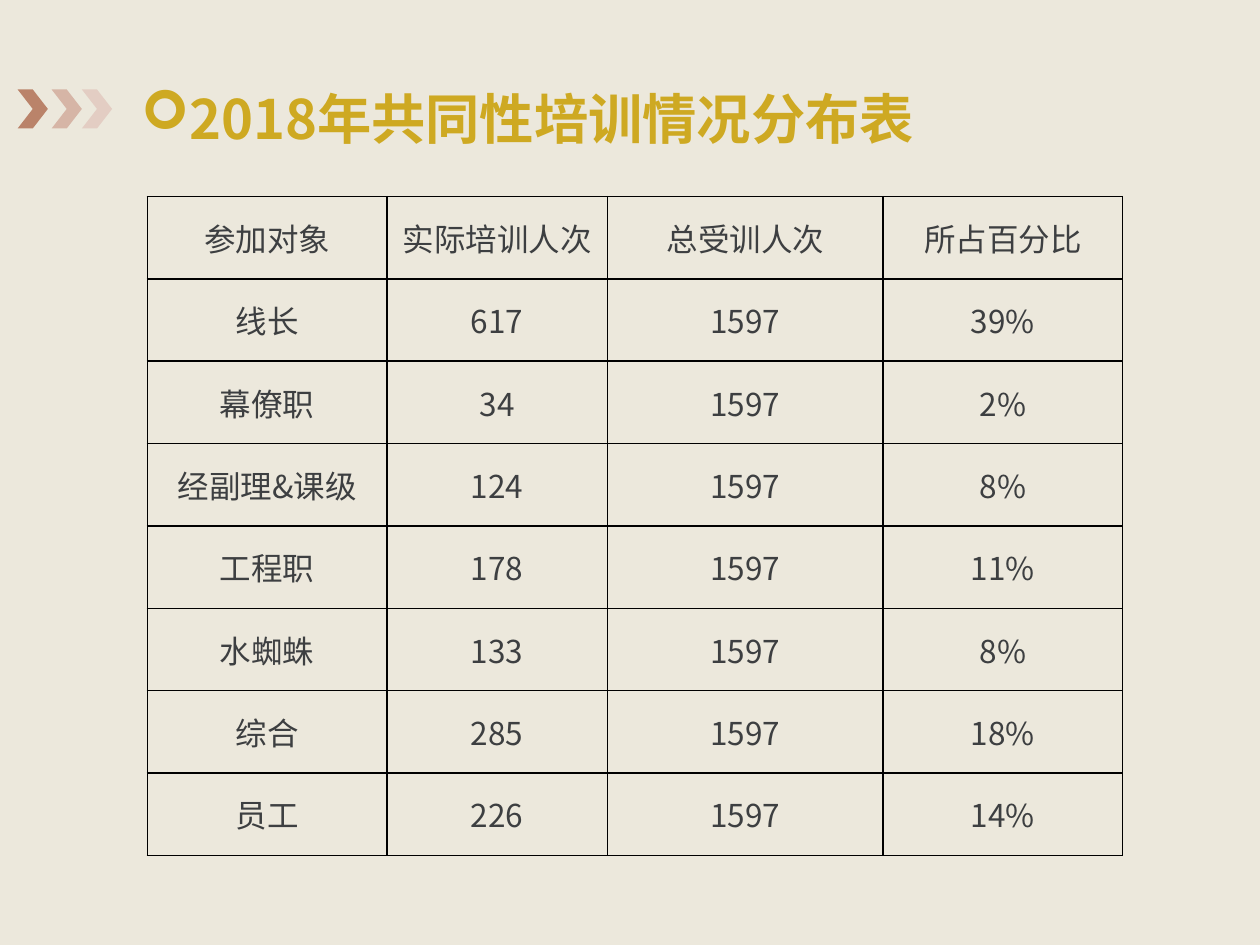
"""Build the slide with the 2018 table of common training by group."""
from lxml.etree import SubElement
from pptx import Presentation
from pptx.dml.color import RGBColor
from pptx.enum.shapes import MSO_SHAPE
from pptx.enum.text import MSO_ANCHOR, MSO_AUTO_SIZE, PP_ALIGN
from pptx.oxml.ns import qn
from pptx.util import Inches, Pt

TITLE = "2018年共同性培训情况分布表"
HEADERS = ("参加对象", "实际培训人次", "总受训人次", "所占百分比")
TOTAL = "1597"
GROUPS = [
    ("线长", "617", "39%"),
    ("幕僚职", "34", "2%"),
    ("经副理&课级", "124", "8%"),
    ("工程职", "178", "11%"),
    ("水蜘蛛", "133", "8%"),
    ("综合", "285", "18%"),
    ("员工", "226", "14%"),
]
CHEVRONS = [(0.14, "BA836A"), (0.41, "D6B5A6"), (0.65, "E3CDC3")]
COLUMN_WIDTHS = (1.9, 1.75, 2.19, 1.9)
ROW_HEIGHT = 5.23 / 8


def paint(fill, color):
    fill.solid()
    fill.fore_color.rgb = RGBColor.from_string(color)


def add_span(para, text, size, color, name, bold=False):
    span = para.add_run()
    span.text = text
    font = span.font
    font.size, font.bold = Pt(size), bold
    paint(font.fill, color)
    font.name = name
    SubElement(font._element, qn("a:ea"), typeface=name)


def add_title(page):
    box = page.shapes.title
    box.left, box.top, box.width, box.height = map(Inches, (1.02, 0.55, 7.81, 0.86))
    frame = box.text_frame
    frame.auto_size = MSO_AUTO_SIZE.NONE
    frame.vertical_anchor = MSO_ANCHOR.MIDDLE
    para = frame.paragraphs[0]
    para.alignment = PP_ALIGN.LEFT
    para.line_spacing = 0.8
    para.space_before = Pt(6)
    properties = para._p.get_or_add_pPr()
    properties.set("marL", str(Inches(0.38)))
    properties.set("indent", str(Inches(-0.38)))
    SubElement(properties, qn("a:buFont"), typeface="Wingdings")
    SubElement(properties, qn("a:buChar"), char="➢")
    add_span(para, TITLE, 31, "CEA922", "Noto Sans CJK TC", True)


def add_borders(cell):
    properties = cell._tc.get_or_add_tcPr()
    for side in ("lnL", "lnR", "lnT", "lnB"):
        line = SubElement(properties, qn(f"a:{side}"), w=str(Pt(1)))
        fill = SubElement(line, qn("a:solidFill"))
        SubElement(fill, qn("a:srgbClr"), val="000000")


def fill_cell(cell, text):
    add_borders(cell)
    cell.fill.background()
    cell.vertical_anchor = MSO_ANCHOR.MIDDLE
    cell.margin_left = cell.margin_right = Inches(0.02)
    cell.margin_top = cell.margin_bottom = 0
    para = cell.text_frame.paragraphs[0]
    para.alignment = PP_ALIGN.CENTER
    add_span(para, text, 18, "3D3F41", "Noto Sans CJK SC")


def add_training_table(page):
    rows = [HEADERS] + [(group, count, TOTAL, share) for group, count, share in GROUPS]
    table = page.shapes.add_table(
        len(rows), len(HEADERS), Inches(1.17), Inches(1.56),
        Inches(sum(COLUMN_WIDTHS)), Inches(ROW_HEIGHT * len(rows))).table
    table.first_row = table.horz_banding = False
    for column, width in zip(table.columns, COLUMN_WIDTHS):
        column.width = Inches(width)
    for row, texts in zip(table.rows, rows):
        row.height = Inches(ROW_HEIGHT)
        for cell, text in zip(row.cells, texts):
            fill_cell(cell, text)


def main():
    deck = Presentation()
    deck.slide_width, deck.slide_height = Inches(10), Inches(7.5)
    page = deck.slides.add_slide(deck.slide_layouts[5])
    paint(page.background.fill, "ECE8DC")
    for left, color in CHEVRONS:
        chevron = page.shapes.add_shape(
            MSO_SHAPE.CHEVRON, Inches(left), Inches(0.71), Inches(0.24), Inches(0.31))
        chevron.shadow.inherit = False
        paint(chevron.fill, color)
        chevron.line.fill.background()
    add_title(page)
    add_training_table(page)
    deck.save("out.pptx")


if __name__ == "__main__":
    main()
